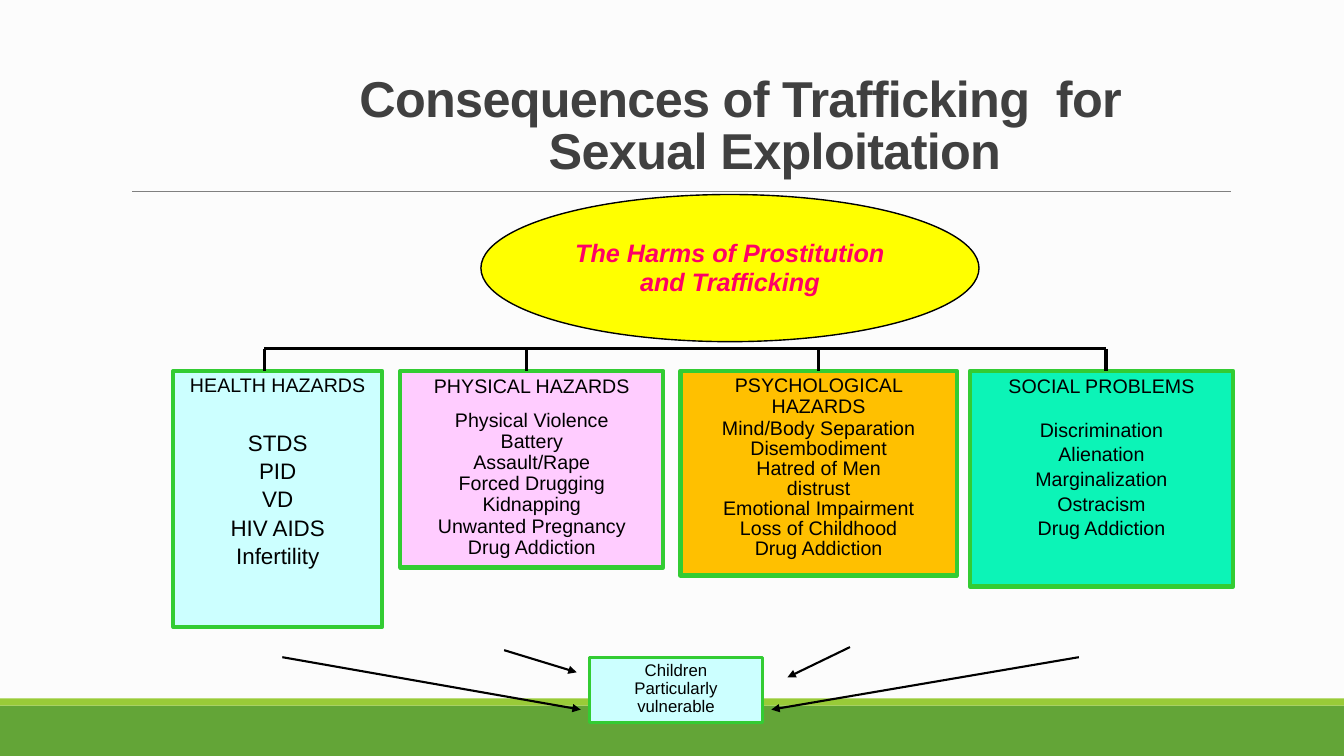
from lxml.etree import SubElement as Sub
from pptx import Presentation
from pptx.dml.color import RGBColor
from pptx.enum.shapes import MSO_CONNECTOR as Link, MSO_SHAPE as Kind
from pptx.enum.text import MSO_ANCHOR as Anchor, PP_ALIGN as Align
from pptx.oxml.ns import qn
from pptx.util import Inches, Pt


def tint(code):
    return RGBColor.from_string(code)


def write(para, text, size=14, color="000000", bold=False, italic=False,
          lead=0.9, gap=0, track=None, hang=0):
    para.alignment = Align.CENTER
    para.line_spacing = lead
    para.space_before = Pt(gap)
    if hang:
        props = para._p.get_or_add_pPr()
        props.set("marL", str(Inches(hang)))
        props.set("indent", str(-Inches(hang)))
    run = para.add_run()
    run.text = text
    font = run.font
    font.name = "Arial"
    font.size = Pt(size)
    font.bold = bold
    font.italic = italic
    font.color.rgb = tint(color)
    if track:
        run._r.get_or_add_rPr().set("spc", str(int(track * 100)))


class Board:
    """Holds the current slide and its shared line colours."""

    edge = "33CC33"
    ink = "000000"

    def __init__(self, slide):
        self.slide = slide

    def shape(self, kind, area, fill, line=None, width=1):
        item = self.slide.shapes.add_shape(kind, *map(Inches, area))
        item.shadow.inherit = False
        item.fill.solid()
        item.fill.fore_color.rgb = tint(fill)
        if line:
            item.line.color.rgb = tint(line)
            item.line.width = Pt(width)
        else:
            item.line.fill.background()
        return item

    def fill(self, item, rows, anchor=Anchor.TOP, wrap=True):
        frame = item.text_frame
        frame.word_wrap = wrap
        frame.vertical_anchor = anchor
        for num, (text, style) in enumerate(rows):
            para = frame.add_paragraph() if num else frame.paragraphs[0]
            write(para, text, **style)

    def box(self, area, fill, rows, width=3):
        item = self.shape(Kind.RECTANGLE, area, fill, self.edge, width)
        self.fill(item, rows)
        return item

    def title(self, area, text, **style):
        item = self.slide.shapes.add_textbox(*map(Inches, area))
        self.fill(item, [(text, style)], Anchor.BOTTOM)

    def wire(self, start, end, width=2.25, color=ink, arrow=False):
        item = self.slide.shapes.add_connector(
            Link.STRAIGHT, *map(Inches, start + end))
        item.line.color.rgb = tint(color)
        item.line.width = Pt(width)
        if arrow:
            Sub(item.line._get_or_add_ln(), qn("a:tailEnd"), type="triangle")
        Sub(item._element.spPr, qn("a:effectLst"))
        return item


HARMS = [
    (1.72, 2.07, 2.54, "CCFFFF", "HEALTH HAZARDS", 0.9,
     ["STDS", "PID", "VD", "HIV AIDS", "Infertility"],
     dict(size=16, lead=1.05), 22),
    (3.97, 2.61, 1.95, "FFCCFF", "PHYSICAL HAZARDS", 0.95,
     ["Physical Violence", "Battery", "Assault/Rape", "Forced Drugging",
      "Kidnapping", "Unwanted Pregnancy", "Drug Addiction"],
     dict(lead=0.9), 8.5),
    (6.75, 2.74, 2.03, "FFC000", "PSYCHOLOGICAL HAZARDS", 0.9,
     ["Mind/Body Separation", "Disembodiment", "Hatred of Men", "distrust",
      "Emotional Impairment", "Loss of Childhood", "Drug Addiction"],
     dict(lead=0.85), 1),
    (9.62, 2.61, 2.14, "0CF4B7", "SOCIAL PROBLEMS", 0.95,
     ["Discrimination", "Alienation", "Marginalization", "Ostracism",
      "Drug Addiction"],
     dict(lead=1.05), 13),
]
ARROWS = [
    ((2.8, 6.52), (5.76, 7.04)),
    ((5, 6.45), (5.72, 6.67)),
    ((8.43, 6.42), (7.81, 6.72)),
    ((10.7, 6.52), (7.65, 7.04)),
]
STUBS = [2.62, 5.22, 8.12, 10.97]
BAR, TOP = 3.46, 3.68


def main():
    deck = Presentation()
    deck.slide_width, deck.slide_height = Inches(13.33), Inches(7.5)
    slide = deck.slides.add_slide(deck.slide_layouts[6])
    slide.background.fill.solid()
    slide.background.fill.fore_color.rgb = tint("FCFCFC")
    board = Board(slide)

    board.shape(Kind.RECTANGLE, (0, 7, 13.33, 0.5), "63A537")
    board.shape(Kind.RECTANGLE, (0, 6.93, 13.33, 0.07), "99CB38")
    board.wire((1.31, 1.9), (12.21, 1.9), 0.5, "808080")
    board.title((3.24, 0.58, 8.2, 1.25),
                "Consequences of Trafficking  for Sexual Exploitation",
                size=36, color="404040", bold=True, lead=0.85,
                track=-0.5, hang=0.69)

    oval = board.shape(Kind.OVAL, (4.77, 1.93, 4.94, 1.46), "FFFF00",
                       board.ink)
    style = dict(size=18, color="FF0066", bold=True, italic=True, lead=0.95)
    board.fill(oval, [("The Harms of Prostitution", style),
                      ("and Trafficking", style)], Anchor.MIDDLE, False)

    boxes = []
    for left, wide, high, fill, head, lead, items, style, gap in HARMS:
        rows = [(head, dict(lead=lead))]
        rows += [(text, dict(style, gap=0 if num else gap))
                 for num, text in enumerate(items)]
        boxes.append(board.box((left, TOP, wide, high), fill, rows))
    board.box((5.85, 6.52, 1.71, 0.65), "CCFFFF",
              [(text, dict(size=12))
               for text in ("Children", "Particularly vulnerable")], 2.25)

    for start, end in ARROWS:
        board.wire(start, end, 1.5, arrow=True)
    board.wire((STUBS[0], BAR), (STUBS[-1], BAR))
    stubs = [board.wire((left, BAR), (left, TOP)) for left in STUBS]
    stubs[2].end_connect(boxes[2], 0)
    deck.save("out.pptx")


if __name__ == "__main__":
    main()
